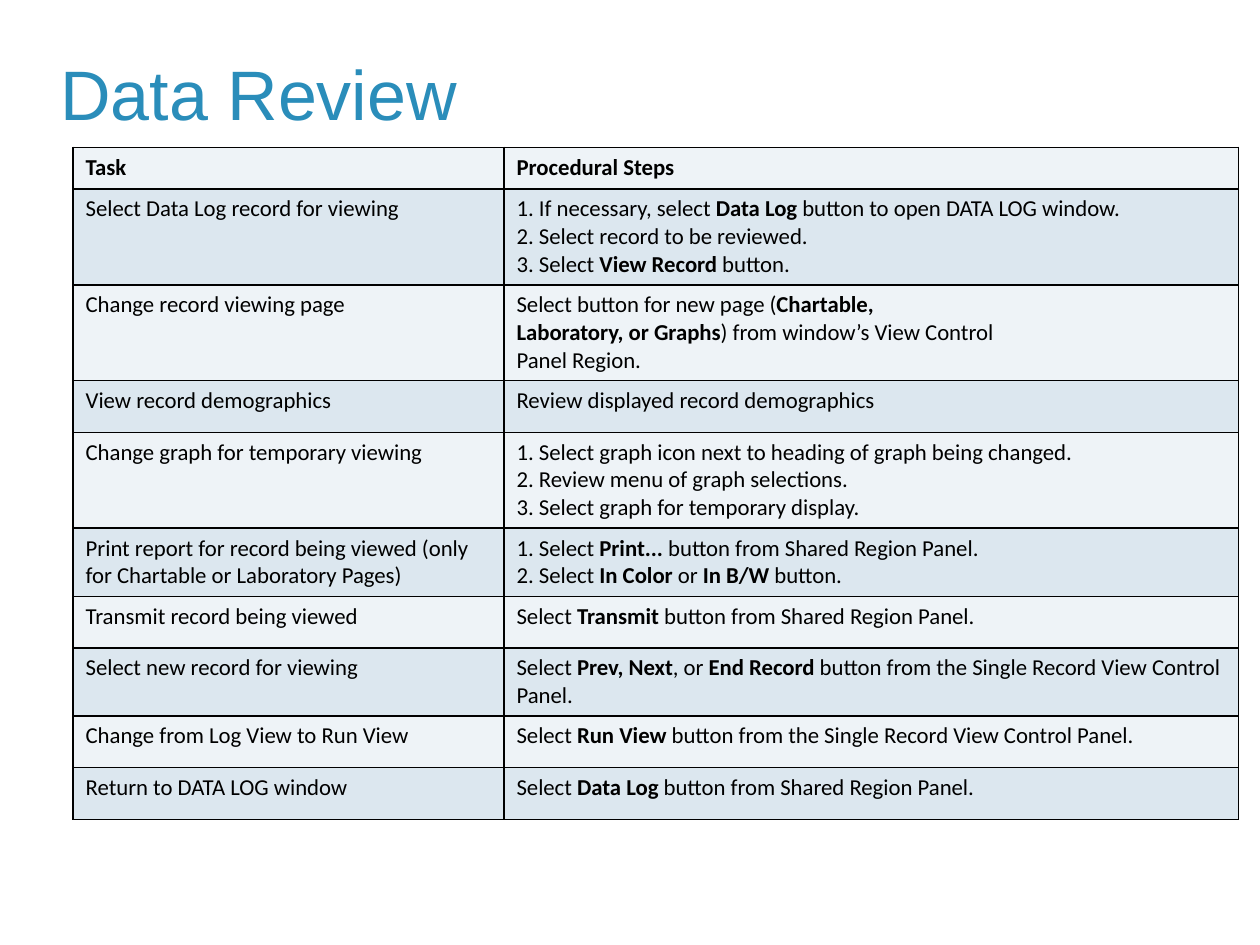
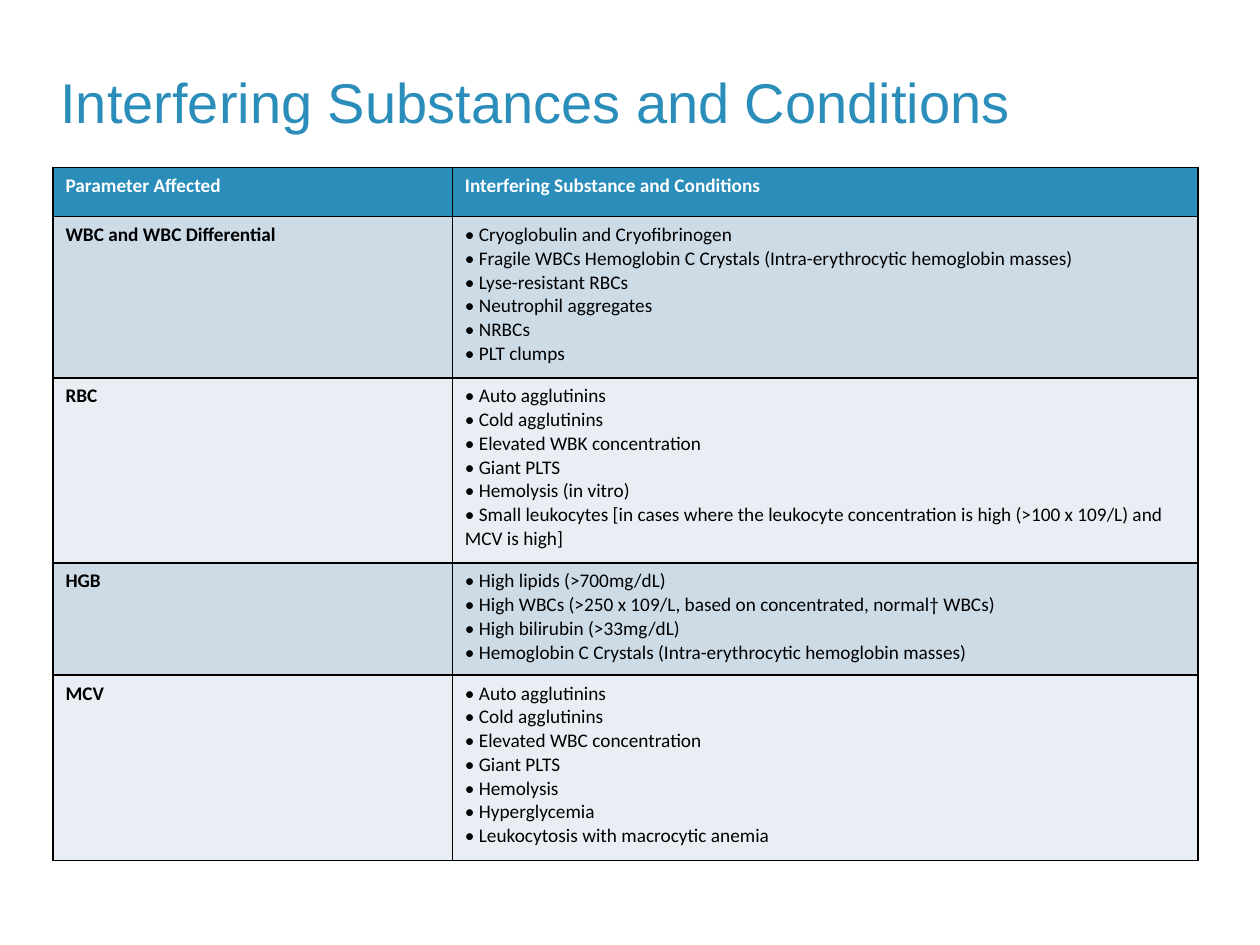
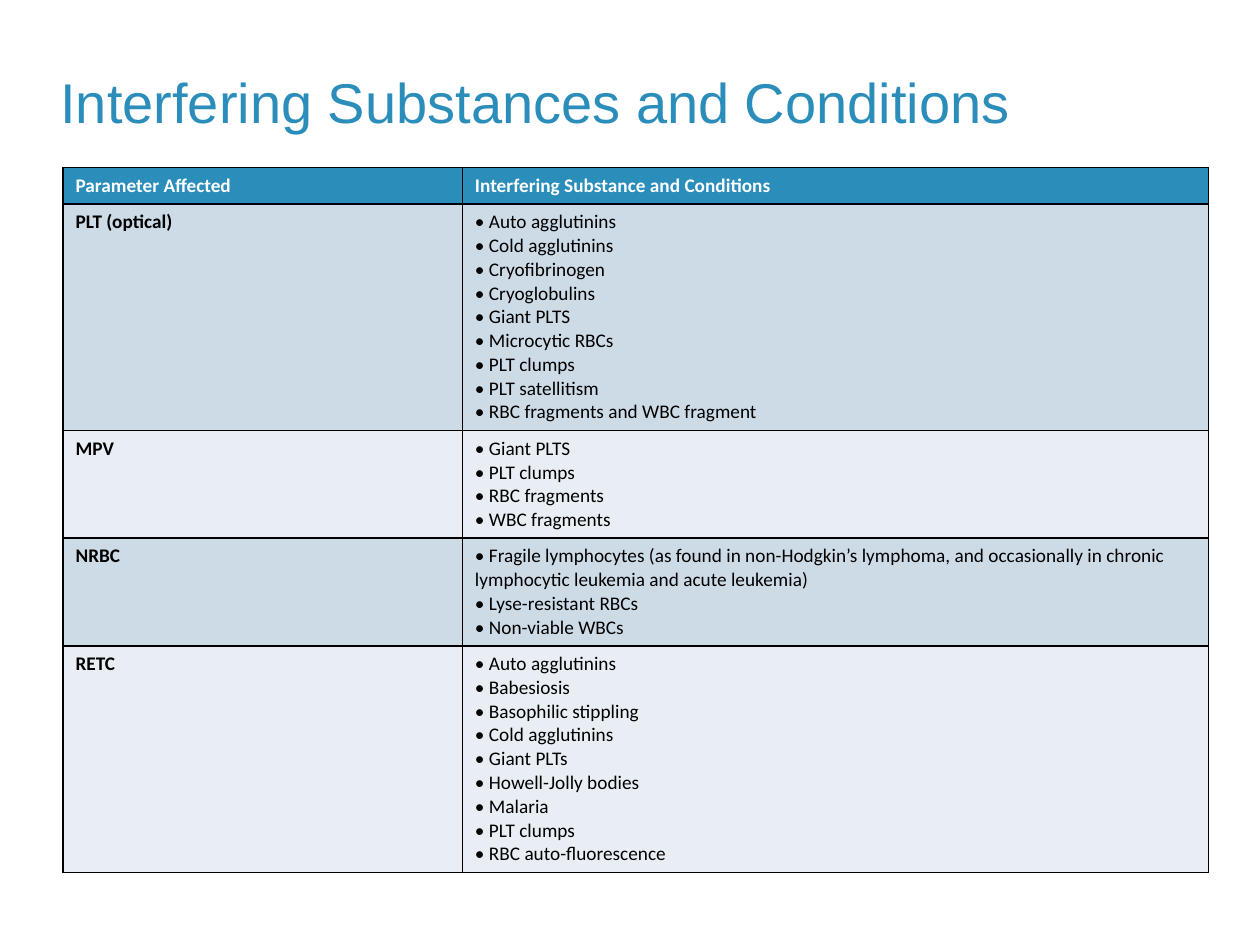
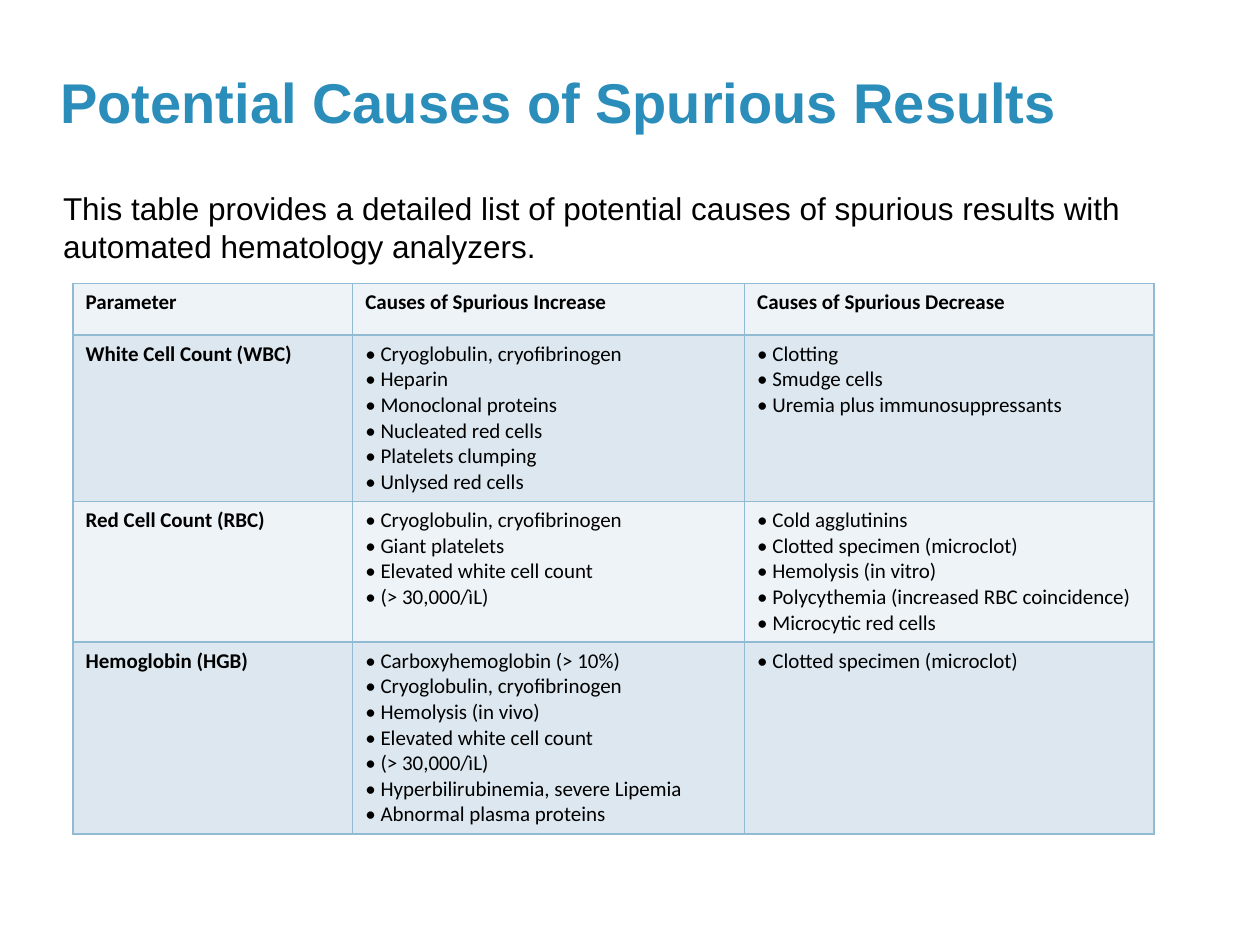
from lxml import etree
from pptx import Presentation
from pptx.dml.color import RGBColor
from pptx.enum import text as et
from pptx.oxml import ns
from pptx.util import Inches, Pt

BLUE, BLACK, WHITE = "2A8DBA", "000000", "FFFFFF"
PALE = {"head": "EEF3F7", "ink": BLACK, "bands": ("DCE7EF", "EEF3F7")}
DEEP = {"head": BLUE, "ink": WHITE, "bands": ("CDDBE7", "E8EEF3")}
PAIR = ["Parameter Affected", "Interfering Substance and Conditions"]

REVIEW = [
    ("Select Data Log record for viewing", [
        "1. If necessary, select *Data Log *button to open DATA LOG window.",
        "2. Select record to be reviewed.",
        "3. Select *View Record *button."]),
    ("Change record viewing page", [
        "Select button for new page (*Chartable,*",
        "*Laboratory, or Graphs*) from window’s View Control",
        "Panel Region."]),
    ("View record demographics", ["Review displayed record demographics"]),
    ("Change graph for temporary viewing", [
        "1. Select graph icon next to heading of graph being changed.",
        "2. Review menu of graph selections.",
        "3. Select graph for temporary display."]),
    ("Print report for record being viewed (only for Chartable or Laboratory Pages)", [
        "1. Select *Print... *button from Shared Region Panel.",
        "2. Select *In Color *or *In B/W *button."]),
    ("Transmit record being viewed", ["Select *Transmit *button from Shared Region Panel."]),
    ("Select new record for viewing", [
        "Select *Prev, Next*, or *End Record *button from the Single Record View Control Panel."]),
    ("Change from Log View to Run View", [
        "Select *Run View *button from the Single Record View Control Panel."]),
    ("Return to DATA LOG window", ["Select *Data Log *button from Shared Region Panel."]),
]

CELLS = [
    ("WBC and WBC Differential", [
        "Cryoglobulin and Cryofibrinogen",
        "Fragile WBCs Hemoglobin C Crystals (Intra-erythrocytic hemoglobin masses)",
        "Lyse-resistant RBCs", "Neutrophil aggregates", "NRBCs", "PLT clumps"]),
    ("RBC", [
        "Auto agglutinins", "Cold agglutinins", "Elevated WBK concentration",
        "Giant PLTS", "Hemolysis (in vitro)",
        "Small leukocytes [in cases where the leukocyte concentration is high "
        "(>100 x 109/L) and MCV is high]"]),
    ("HGB", [
        "High lipids (>700mg/dL)",
        "High WBCs (>250 x 109/L, based on concentrated, normal† WBCs)",
        "High bilirubin (>33mg/dL)",
        "Hemoglobin C Crystals (Intra-erythrocytic hemoglobin masses)"]),
    ("MCV", [
        "Auto agglutinins", "Cold agglutinins", "Elevated WBC concentration",
        "Giant PLTS", "Hemolysis", "Hyperglycemia",
        "Leukocytosis with macrocytic anemia"]),
]

PLATES = [
    ("PLT (optical)", [
        "Auto agglutinins", "Cold agglutinins", "Cryofibrinogen", "Cryoglobulins",
        "Giant PLTS", "Microcytic RBCs", "PLT clumps", "PLT satellitism",
        "RBC fragments and WBC fragment"]),
    ("MPV", ["Giant PLTS", "PLT clumps", "RBC fragments", "WBC fragments"]),
    ("NRBC", [
        "Fragile lymphocytes (as found in non-Hodgkin’s lymphoma, and occasionally "
        "in chronic lymphocytic leukemia and acute leukemia)",
        "Lyse-resistant RBCs", "Non-viable WBCs"]),
    ("RETC", [
        "Auto agglutinins", "Babesiosis", "Basophilic stippling", "Cold agglutinins",
        "Giant PLTs", "Howell-Jolly bodies", "Malaria", "PLT clumps",
        "RBC auto-fluorescence"]),
]

CAUSES = [
    ("White Cell Count (WBC)", [
        "Cryoglobulin, cryofibrinogen", "Heparin", "Monoclonal proteins",
        "Nucleated red cells", "Platelets clumping", "Unlysed red cells"],
     ["Clotting", "Smudge cells", "Uremia plus immunosuppressants"]),
    ("Red Cell Count (RBC)", [
        "Cryoglobulin, cryofibrinogen", "Giant platelets",
        "Elevated white cell count", "(> 30,000/ìL)"],
     ["Cold agglutinins", "Clotted specimen (microclot)", "Hemolysis (in vitro)",
      "Polycythemia (increased RBC coincidence)", "Microcytic red cells"]),
    ("Hemoglobin (HGB)", [
        "Carboxyhemoglobin (> 10%)", "Cryoglobulin, cryofibrinogen",
        "Hemolysis (in vivo)", "Elevated white cell count", "(> 30,000/ìL)",
        "Hyperbilirubinemia, severe Lipemia", "Abnormal plasma proteins"],
     ["Clotted specimen (microclot)"]),
]

SLIDES = [
    {"title": "Data Review", "size": 40, "bold": False, "look": PALE, "edge": BLACK,
     "at": (0.58, 1.17), "cols": (3.42, 5.83), "rows": [0.33] + [0.41] * 9,
     "font": 13, "head": ["Task", "Procedural Steps"], "data": REVIEW,
     "mark": "", "key": False},
    {"title": "Interfering Substances and Conditions", "size": 32, "bold": False,
     "look": DEEP, "edge": BLACK, "at": (0.42, 1.33), "cols": (3.17, 5.92),
     "rows": [0.39, 1.28, 1.47, 0.89, 1.47], "font": 11, "head": PAIR,
     "data": CELLS, "mark": "• ", "key": True},
    {"title": "Interfering Substances and Conditions", "size": 32, "bold": False,
     "look": DEEP, "edge": BLACK, "at": (0.5, 1.33), "cols": (3.17, 5.92),
     "rows": [0.24, 1.28, 0.76, 0.76, 1.67], "font": 11, "head": PAIR,
     "data": PLATES, "mark": "• ", "key": True},
    {"title": "Potential Causes of Spurious Results", "size": 32, "bold": True,
     "look": PALE, "edge": "91BAD3", "at": (0.58, 2.25), "cols": (2.22, 3.11, 3.25),
     "rows": [0.41] * 4, "font": 12,
     "head": ["Parameter", "Causes of Spurious Increase", "Causes of Spurious Decrease"],
     "data": CAUSES, "mark": "• ", "key": True,
     "body": "This table provides a detailed list of potential causes of spurious "
             "results with automated hematology analyzers."},
]


def rgb(code):
    return RGBColor.from_string(code)


def add_run(para, words, face, size, ink, bold=False):
    run = para.add_run()
    run.text = words
    font = run.font
    font.name, font.size, font.bold = face, Pt(size), bold
    font.color.rgb = rgb(ink)


def set_frame(shape, box, anchor):
    shape.left, shape.top, shape.width, shape.height = map(Inches, box)
    frame = shape.text_frame
    frame.margin_left = frame.margin_right = frame.margin_top = frame.margin_bottom = 0
    frame.word_wrap = True
    frame.auto_size = et.MSO_AUTO_SIZE.NONE
    frame.vertical_anchor = anchor
    para = frame.paragraphs[0]
    para.alignment = et.PP_ALIGN.LEFT
    para.space_before = Pt(0)
    return para


def add_title(slide, page):
    para = set_frame(slide.shapes.title, (0.48, 0.07, 9.02, 1.01), et.MSO_ANCHOR.BOTTOM)
    para.line_spacing = 0.9
    add_run(para, page["title"], "Arial", page["size"], BLUE, page["bold"])


def add_body(slide, words):
    para = set_frame(slide.placeholders[1], (0.5, 1.5, 9.01, 5.33), et.MSO_ANCHOR.TOP)
    props = para._p.get_or_add_pPr()
    props.set("marL", "0")
    props.set("indent", "0")
    etree.SubElement(props, ns.qn("a:buNone"))
    para.space_after = Pt(9)
    add_run(para, words, "Arial", 18, BLACK)


def set_edges(cell, code):
    props = cell._tc.get_or_add_tcPr()
    for side in ("lnL", "lnR", "lnT", "lnB"):
        line = etree.SubElement(props, ns.qn("a:" + side), w=str(Pt(1)))
        fill = etree.SubElement(line, ns.qn("a:solidFill"))
        etree.SubElement(fill, ns.qn("a:srgbClr"), val=code)


def fill_cell(cell, lines, size, ink, bold, back, edge):
    set_edges(cell, edge)
    cell.fill.solid()
    cell.fill.fore_color.rgb = rgb(back)
    frame = cell.text_frame
    for i, line in enumerate(lines):
        para = frame.add_paragraph() if i else frame.paragraphs[0]
        for j, part in enumerate(line.split("*")):
            if part:
                add_run(para, part, "Calibri", size, ink, bold or j % 2 == 1)


def add_grid(slide, page):
    cols, rows, look = page["cols"], page["rows"], page["look"]
    box = map(Inches, (*page["at"], sum(cols), sum(rows)))
    grid = slide.shapes.add_table(len(rows), len(cols), *box).table
    grid.horz_banding = False
    for col, width in zip(grid.columns, cols):
        col.width = Inches(width)
    for row, height in zip(grid.rows, rows):
        row.height = Inches(height)
    for c, words in enumerate(page["head"]):
        fill_cell(grid.cell(0, c), [words], page["font"], look["ink"], True,
                  look["head"], page["edge"])
    for r, (name, *lists) in enumerate(page["data"]):
        marked = [[page["mark"] + item for item in items] for items in lists]
        for c, lines in enumerate([[name]] + marked):
            fill_cell(grid.cell(r + 1, c), lines, page["font"], BLACK,
                      page["key"] and c == 0, look["bands"][r % 2], page["edge"])


def main():
    deck = Presentation()
    deck.slide_width, deck.slide_height = Inches(10), Inches(7.5)
    for page in SLIDES:
        layout = deck.slide_layouts[1 if "body" in page else 5]
        slide = deck.slides.add_slide(layout)
        add_title(slide, page)
        if "body" in page:
            add_body(slide, page["body"])
        add_grid(slide, page)
    deck.save("out.pptx")


if __name__ == "__main__":
    main()
